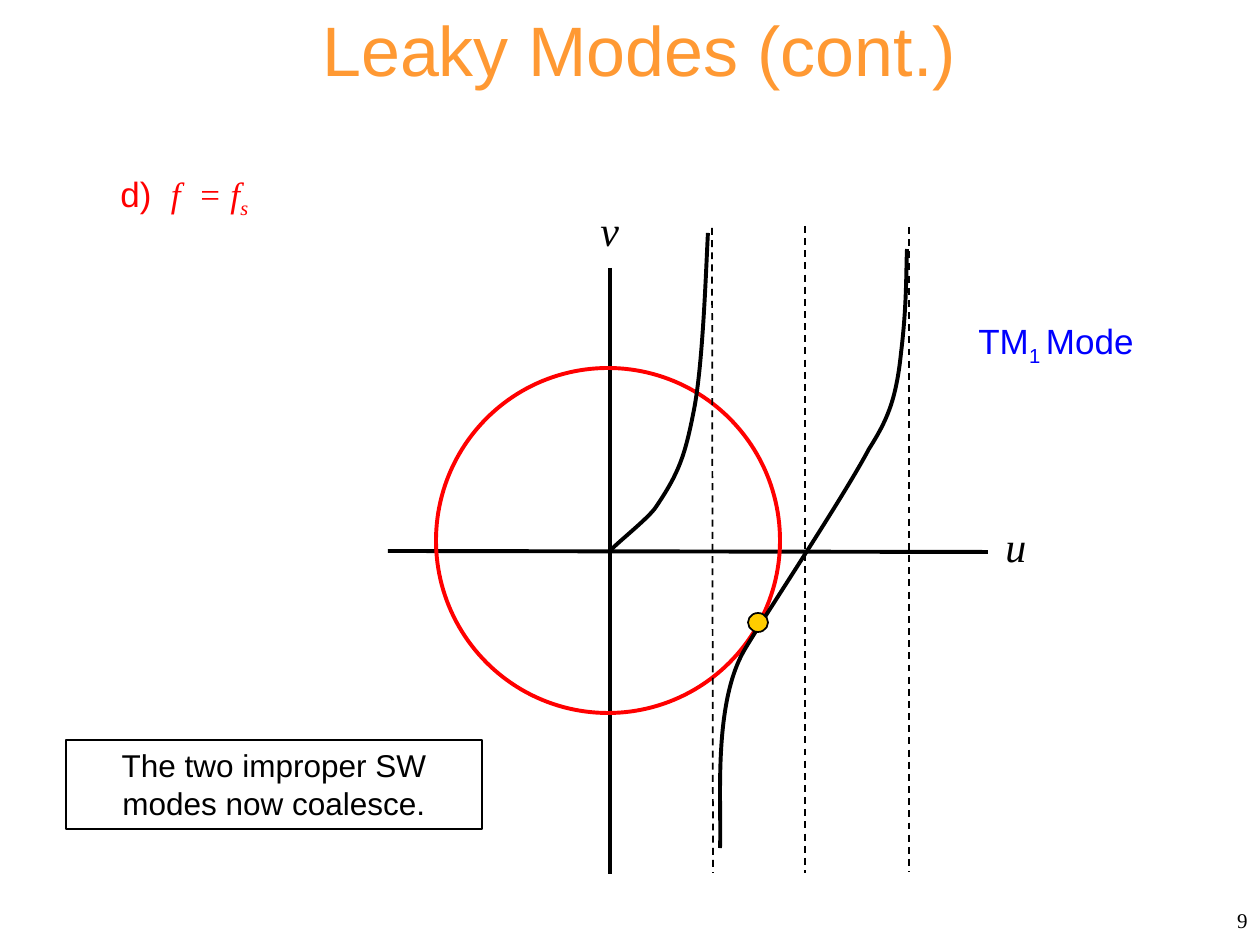
from lxml import etree
from pptx import Presentation
from pptx.dml.color import RGBColor
from pptx.enum.dml import MSO_LINE
from pptx.enum.shapes import MSO_CONNECTOR, MSO_SHAPE
from pptx.enum.text import MSO_ANCHOR, PP_ALIGN
from pptx.oxml.ns import qn
from pptx.util import Pt

PX = 914400 / 126
BLACK = RGBColor(0x00, 0x00, 0x00)
RED = RGBColor(0xFF, 0x00, 0x00)
BLUE = RGBColor(0x00, 0x00, 0xFF)
ORANGE = RGBColor(0xFF, 0x99, 0x33)
YELLOW = RGBColor(0xFF, 0xCC, 0x00)
SANS, SERIF = "Arial", "Times New Roman"
LEFT, CENTER, RIGHT = PP_ALIGN.LEFT, PP_ALIGN.CENTER, PP_ALIGN.RIGHT
TOP, MIDDLE = MSO_ANCHOR.TOP, MSO_ANCHOR.MIDDLE
STRAIGHT, DASH = MSO_CONNECTOR.STRAIGHT, MSO_LINE.DASH
OVAL, RECTANGLE = MSO_SHAPE.OVAL, MSO_SHAPE.RECTANGLE
THICK, THIN = 2.25, 1

ASYMPTOTES = [((324, 29), (325, 674)), ((417, 27), (417, 674)), ((521, 28), (521, 673))]
FIRST_BRANCH = [
    (222, 352), (229, 344), (261, 319), (268, 308), (291, 274),
    (297, 257), (306, 211), (315, 165), (318, 71), (320, 34),
]
SECOND_BRANCH = [
    (332, 649), (334, 609), (324, 505), (357, 450), (379, 413), (455, 299), (481, 250),
    (498, 223), (508, 203), (513, 154), (519, 105), (518, 72), (519, 50),
]


def emu(*lengths):
    return [round(length * PX) for length in lengths]


def add_span(para, text, size=20, font=SANS, color=BLACK, italic=False, baseline=0, spacing=0):
    span = para.add_run()
    span.text = text
    span.font.size = Pt(size)
    span.font.name = font
    span.font.italic = italic
    span.font.color.rgb = color
    properties = span._r.get_or_add_rPr()
    if baseline:
        properties.set("baseline", str(baseline * 1000))
    if spacing:
        properties.set("spc", str(round(spacing * 100)))


def add_text(shapes, box, align=LEFT, anchor=TOP, wrap=True):
    frame = shapes.add_textbox(*emu(*box)).text_frame
    frame.word_wrap = wrap
    frame.vertical_anchor = anchor
    para = frame.paragraphs[0]
    para.alignment = align
    return para


def set_line(line, color, width, dash=None):
    line.color.rgb = color
    line.width = Pt(width)
    if dash:
        line.dash_style = dash


def add_outline(shapes, kind, box, color, width, fill=None):
    shape = shapes.add_shape(kind, *emu(*box))
    shape.shadow.inherit = False
    set_line(shape.line, color, width)
    if fill is None:
        shape.fill.background()
    else:
        shape.fill.solid()
        shape.fill.fore_color.rgb = fill
    return shape


def add_line(shapes, start, end, width, dash=None):
    line = shapes.add_connector(STRAIGHT, *emu(*start, *end))
    set_line(line.line, BLACK, width, dash)
    etree.SubElement(line._element.spPr, qn("a:effectLst"))


def bend_segments(curve):
    segments = list(curve._element.iter(qn("a:lnTo")))
    outline = segments[0].getparent()
    for first in range(0, len(segments), 3):
        bend = etree.SubElement(outline, qn("a:cubicBezTo"))
        for segment in segments[first:first + 3]:
            bend.append(segment[0])
            outline.remove(segment)


def add_curve(shapes, knots):
    start, *rest = [emu(*knot) for knot in knots]
    builder = shapes.build_freeform(*start)
    builder.add_line_segments(rest, close=False)
    curve = builder.convert_to_shape()
    bend_segments(curve)
    curve.shadow.inherit = False
    curve.fill.background()
    set_line(curve.line, BLACK, THICK)


def add_title(page, box):
    add_span(add_text(page.shapes, box, align=CENTER), "Leaky Modes (cont.)", size=40, color=ORANGE)


def add_case_label(page, box):
    para = add_text(page.shapes, box, wrap=False)
    math_style = {"font": SERIF, "color": RED, "italic": True}
    add_span(para, "d)", color=RED)
    add_span(para, " ", color=RED, spacing=5.5)
    add_span(para, "f", **math_style)
    add_span(para, " ", spacing=5, **math_style)
    add_span(para, "= f", **math_style)
    add_span(para, "s", baseline=-25, **math_style)


def add_mode_label(page, box):
    para = add_text(page.shapes, box, wrap=False)
    add_span(para, "TM", color=BLUE)
    add_span(para, "1 ", color=BLUE, baseline=-25)
    add_span(para, "Mode", color=BLUE)


def add_plot(page, box):
    left, top = box[:2]

    def place(x, y, *size):
        return (left + x, top + y, *size)

    shapes = page.shapes.add_group_shape().shapes
    add_line(shapes, place(0, 352), place(600, 353), THICK)
    add_line(shapes, place(222, 69), place(222, 675), THICK)
    add_outline(shapes, OVAL, place(48, 169, 344, 345), RED, THICK)
    for start, end in ASYMPTOTES:
        add_line(shapes, place(*start), place(*end), THIN, DASH)
    for branch in (FIRST_BRANCH, SECOND_BRANCH):
        add_curve(shapes, [place(*knot) for knot in branch])
    for name, label_box in (("v", (200, -1, 66, 63)), ("u", (605, 315, 59, 63))):
        para = add_text(shapes, place(*label_box), wrap=False)
        add_span(para, name, size=24, font=SERIF, italic=True)
    add_outline(shapes, OVAL, place(360, 414, 20, 19), BLACK, THIN, YELLOW)


def add_page_number(page, box):
    para = add_text(page.shapes, box, align=RIGHT, anchor=MIDDLE)
    add_span(para, "9", size=12, font=SERIF)


def add_note(page, box):
    frame = add_outline(page.shapes, RECTANGLE, box, BLACK, THIN).text_frame
    frame.word_wrap = True
    frame.vertical_anchor = TOP
    para = frame.paragraphs[0]
    para.alignment = CENTER
    add_span(para, "The two improper SW modes now coalesce.", size=18)


def main():
    deck = Presentation()
    deck.slide_width, deck.slide_height = emu(1260, 945)
    page = deck.slides.add_slide(deck.slide_layouts[6])
    add_case_label(page, (108, 166, 161, 55))
    add_title(page, (256, 0, 766, 97))
    add_plot(page, (388, 199, 664, 675))
    add_page_number(page, (966, 895, 294, 50))
    add_note(page, (66, 740, 416, 89))
    add_mode_label(page, (966, 313, 183, 54))
    deck.save("out.pptx")


if __name__ == "__main__":
    main()
